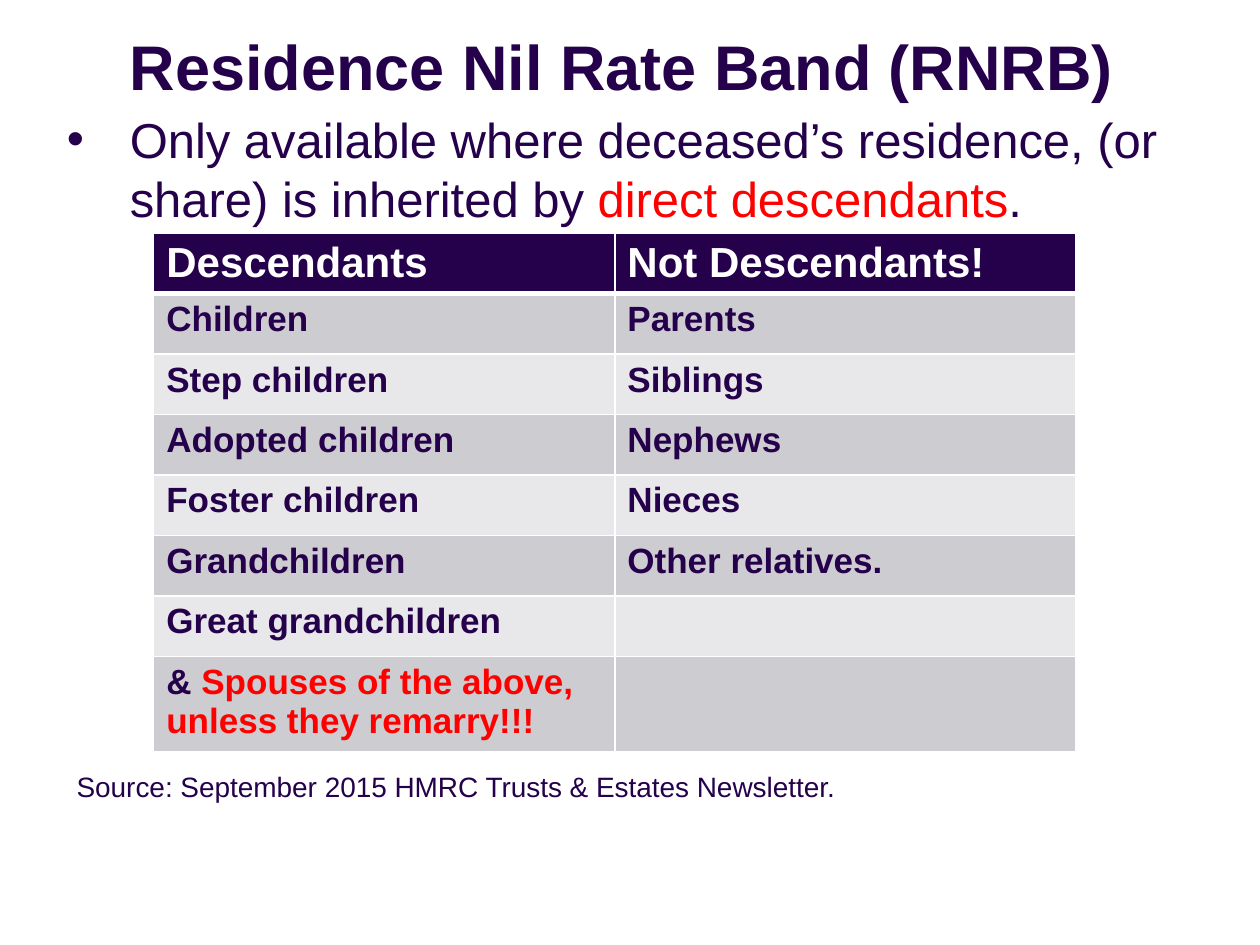
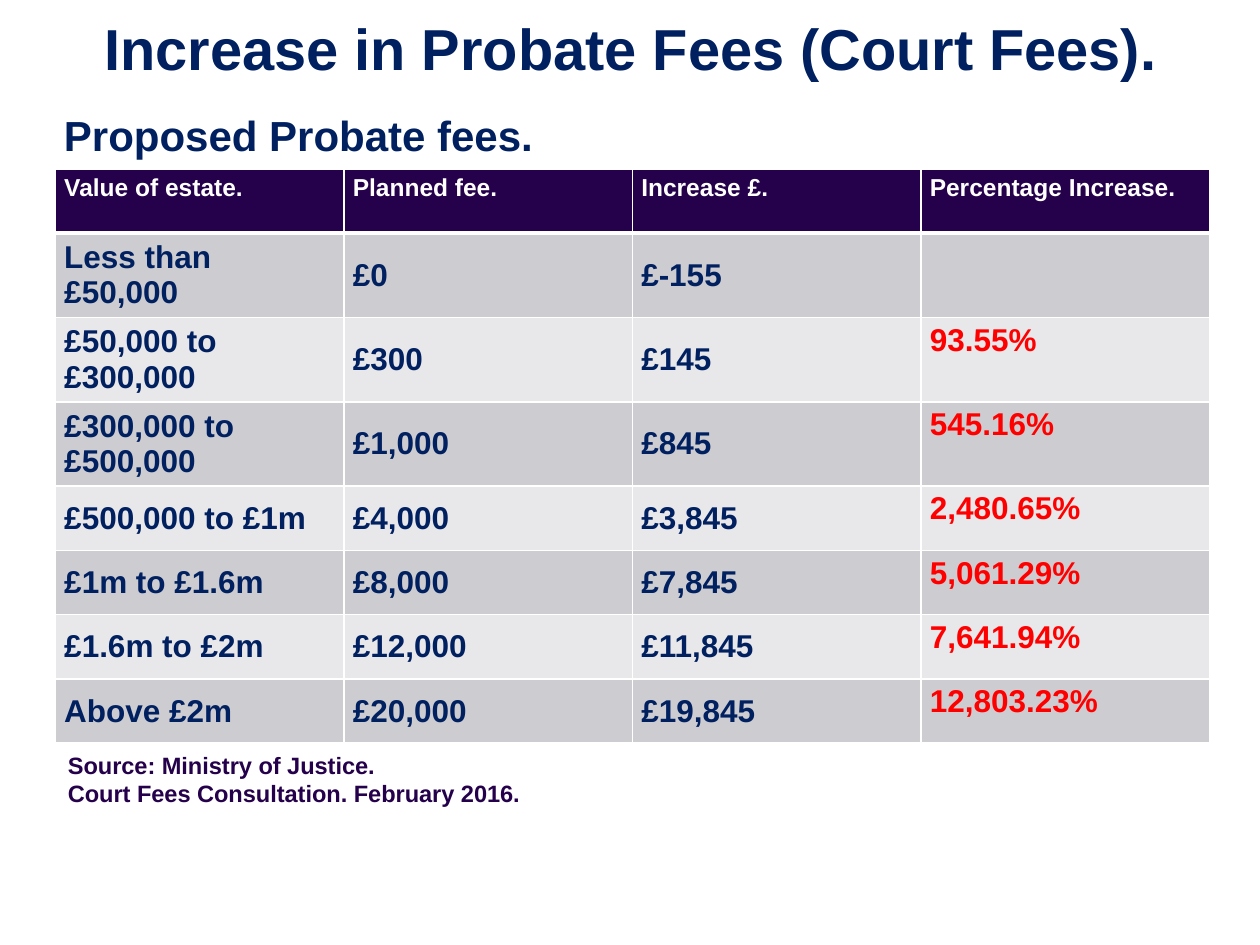
from lxml import etree
from pptx import Presentation
from pptx.dml.color import RGBColor
from pptx.enum.text import MSO_ANCHOR, MSO_AUTO_SIZE, PP_ALIGN
from pptx.oxml.ns import qn
from pptx.util import Inches, Pt

COLOURS = {
    "plum": "25004B",
    "navy": "002060",
    "red": "FF0000",
    "white": "FFFFFF",
    "dark band": "CDCCD0",
    "light band": "E8E7E9",
}
FONT = "Arial"


def write_text(text_frame, lines, size, bold=False):
    """Fill the frame with lines, each a list of (text, colour) runs."""
    text_frame.word_wrap = True
    text_frame.auto_size = MSO_AUTO_SIZE.NONE
    for index, line in enumerate(lines):
        paragraph = text_frame.paragraphs[0] if index == 0 else text_frame.add_paragraph()
        paragraph.space_before = Pt(0)
        for text, colour in line:
            run = paragraph.add_run()
            run.text = text
            run.font.name = FONT
            run.font.size = Pt(size)
            run.font.bold = bold
            run.font.color.rgb = RGBColor.from_string(COLOURS[colour])


def add_banded_table(slide, left, top, column_width, row_heights, rows, sizes, margins, colour):
    """Add a table of rows whose cells are text or lists of (text, colour) runs."""
    columns = len(rows[0])
    table = slide.shapes.add_table(
        len(rows), columns, Inches(left), Inches(top),
        Inches(column_width * columns), Inches(sum(row_heights))).table
    for column in table.columns:
        column.width = Inches(column_width)
    for row_index, (values, height) in enumerate(zip(rows, row_heights)):
        table.rows[row_index].height = Inches(height)
        is_header = row_index == 0
        band = "plum" if is_header else "dark band" if row_index % 2 else "light band"
        for column_index, value in enumerate(values):
            cell = table.cell(row_index, column_index)
            cell.margin_left = cell.margin_right = Inches(margins[0])
            cell.margin_top = cell.margin_bottom = Inches(margins[1])
            properties = cell._tc.get_or_add_tcPr()
            for side in ("L", "R", "T", "B"):
                heavy = (is_header and side == "B") or (row_index == 1 and side == "T")
                border = etree.SubElement(properties, qn(f"a:ln{side}"), w=str(Pt(3 if heavy else 1)))
                border_fill = etree.SubElement(border, qn("a:solidFill"))
                etree.SubElement(border_fill, qn("a:srgbClr"), val=COLOURS["white"])
            cell.fill.solid()
            cell.fill.fore_color.rgb = RGBColor.from_string(COLOURS[band])
            if value:
                text_colour = "white" if is_header else colour
                runs = [(value, text_colour)] if isinstance(value, str) else value
                write_text(cell.text_frame, [runs], sizes[0] if is_header else sizes[1], True)
    return table


presentation = Presentation()
presentation.slide_width = Inches(10)
presentation.slide_height = Inches(7.5)
layouts = presentation.slide_layouts

# Slide 1: residence nil rate band
band_slide = presentation.slides.add_slide(layouts.get_by_name("Title and Content"))
fees_slide = presentation.slides.add_slide(layouts.get_by_name("Title Only"))

titles = [
    (band_slide, "Residence Nil Rate Band (RNRB)", (0.25, 0.21, 9.37, 0.61), 36, "plum", PP_ALIGN.CENTER),
    (fees_slide, "Increase in Probate Fees (Court Fees).", (0.73, 0.05, 8.62, 0.65), 33, "navy", PP_ALIGN.LEFT),
]
for slide, text, box, size, colour, alignment in titles:
    title = slide.shapes.title
    title.left, title.top, title.width, title.height = map(Inches, box)
    frame = title.text_frame
    frame.margin_top = frame.margin_bottom = 0
    frame.vertical_anchor = MSO_ANCHOR.MIDDLE
    write_text(frame, [[(text, colour)]], size, True)
    frame.paragraphs[0].alignment = alignment

body = band_slide.placeholders[1]
body.left, body.top, body.width, body.height = map(Inches, (0.43, 0.82, 9.13, 1.04))
write_text(body.text_frame, [[
    ("Only available where deceased’s residence, (or share) is inherited by ", "plum"),
    ("direct descendants", "red"),
    (".", "plum"),
]], 28)
bullet_properties = body.text_frame.paragraphs[0]._p.get_or_add_pPr()
bullet_properties.set("marL", str(Inches(0.5)))
bullet_properties.set("indent", str(Inches(-0.5)))
etree.SubElement(bullet_properties, qn("a:buFont"), typeface=FONT)
etree.SubElement(bullet_properties, qn("a:buChar"), char="•")

descendant_rows = [
    ("Descendants", "Not Descendants!"),
    ("Children", "Parents"),
    ("Step children", "Siblings"),
    ("Adopted children", "Nephews"),
    ("Foster children", "Nieces"),
    ("Grandchildren", "Other relatives."),
    ("Great grandchildren", ""),
    ([("&", "plum"), (" Spouses of the above, unless they remarry!!!", "red")], ""),
]
add_banded_table(band_slide, 1.22, 1.85, 3.66, [0.48] * 7 + [0.76], descendant_rows,
                 sizes=(24, 20), margins=(0.1, 0.05), colour="plum")

# Slide 2: probate fees
fee_rows = [
    ("Value of estate.", "Planned fee.", "Increase £.", "Percentage Increase."),
    ("Less than £50,000", "£0", "£-155", ""),
    ("£50,000 to £300,000", "£300", "£145", "93.55%"),
    ("£300,000 to £500,000", "£1,000", "£845", "545.16%"),
    ("£500,000 to £1m", "£4,000", "£3,845", "2,480.65%"),
    ("£1m to £1.6m", "£8,000", "£7,845", "5,061.29%"),
    ("£1.6m to £2m", "£12,000", "£11,845", "7,641.94%"),
    ("Above £2m", "£20,000", "£19,845", "12,803.23%"),
]
fee_table = add_banded_table(fees_slide, 0.44, 1.34, 2.29, [0.51] + [0.67] * 3 + [0.51] * 4, fee_rows,
                             sizes=(14, 18), margins=(0.07, 0.04), colour="navy")
for row_index in range(1, len(fee_rows)):
    fee_table.cell(row_index, 0).margin_right = Inches(0.1)
    for column_index in range(3):
        fee_table.cell(row_index, column_index).vertical_anchor = MSO_ANCHOR.MIDDLE
    for run in fee_table.cell(row_index, 3).text_frame.paragraphs[0].runs:
        run.font.color.rgb = RGBColor.from_string(COLOURS["red"])

# Subheading and source notes
notes = [
    (band_slide, (0.51, 6.06, 9.13, 0.37), ["Source: September 2015 HMRC Trusts & Estates Newsletter."],
     16, False, "plum"),
    (fees_slide, (0.41, 0.82, 3.96, 0.5), ["Proposed Probate fees."], 24, True, "navy"),
    (fees_slide, (0.44, 5.91, 3.91, 0.56),
     ["Source: Ministry of Justice.", "Court Fees Consultation. February 2016."], 13.5, True, "plum"),
]
for slide, box, lines, size, bold, colour in notes:
    note = slide.shapes.add_textbox(*map(Inches, box))
    write_text(note.text_frame, [[(line, colour)] for line in lines], size, bold)

presentation.save("out.pptx")
